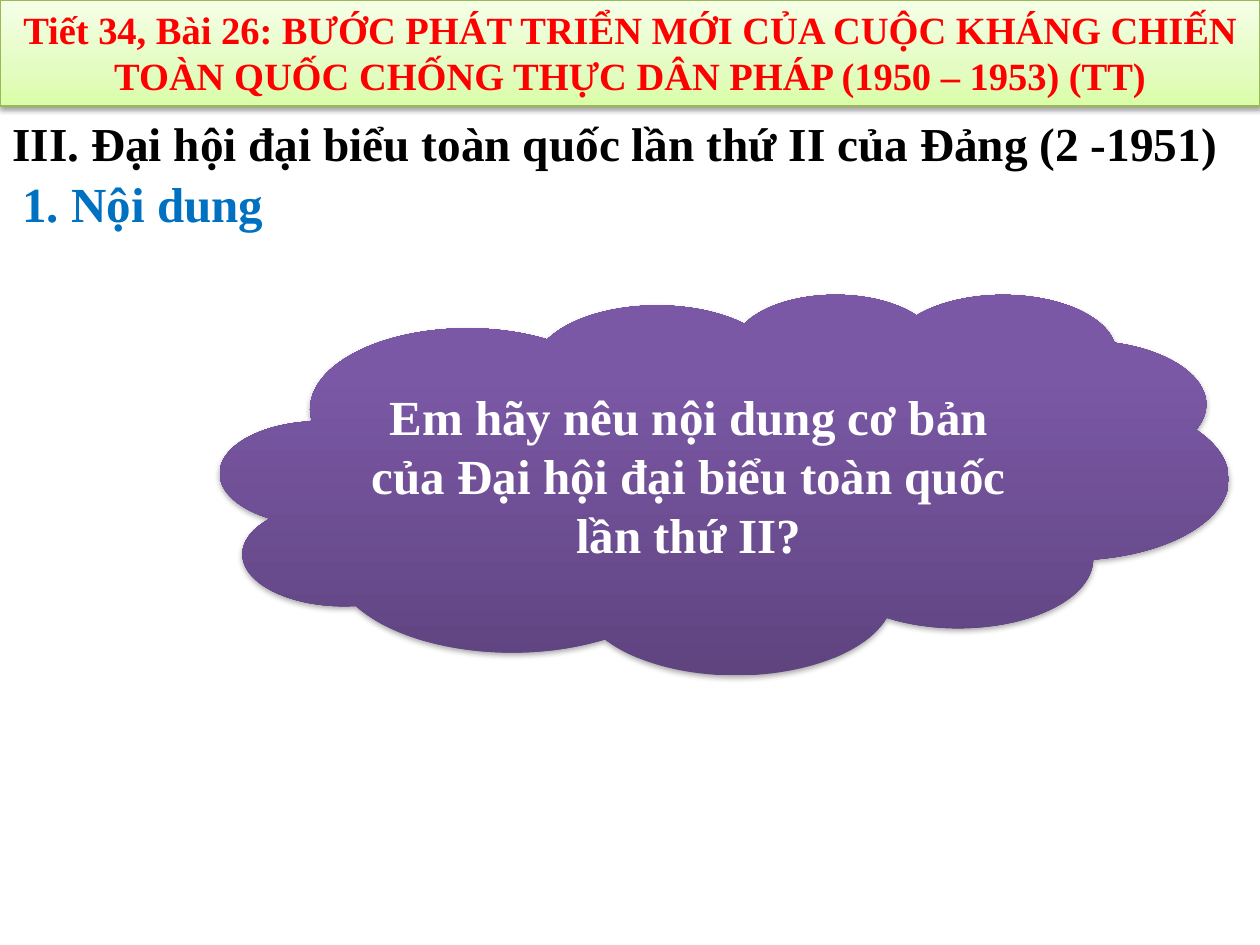
from dataclasses import dataclass

from pptx import Presentation
from pptx.dml.color import RGBColor
from pptx.enum.shapes import MSO_SHAPE
from pptx.enum.text import MSO_ANCHOR, MSO_AUTO_SIZE, PP_ALIGN
from pptx.oxml import parse_xml
from pptx.oxml.ns import nsdecls, qn
from pptx.util import Inches, Pt


@dataclass(frozen=True)
class Theme:
    font: str = "Times New Roman"
    title_color: str = "FF0000"
    heading_color: str = "000000"
    subheading_color: str = "0070C0"
    question_color: str = "FFFFFF"
    shadow_color: str = "000000"
    banner_line: str = "98B955"
    banner_stops: tuple = ((0, "DAFDA7"), (35, "E4FCC2"), (100, "F5FFE7"))
    cloud_stops: tuple = ((0, "5F4480"), (80, "7B58A6"), (100, "7C57A8"))
    title_size: float = 22
    heading_size: float = 27
    body_size: float = 28


@dataclass(frozen=True)
class Label:
    text: str
    size: float
    color: str
    align: PP_ALIGN = PP_ALIGN.LEFT
    anchor: MSO_ANCHOR = MSO_ANCHOR.TOP
    auto_size: MSO_AUTO_SIZE = MSO_AUTO_SIZE.SHAPE_TO_FIT_TEXT


@dataclass(frozen=True)
class Frame:
    left: float
    top: float
    width: float
    height: float

    def lengths(self) -> list:
        return [Inches(v) for v in (self.left, self.top, self.width, self.height)]


THEME = Theme()


def set_all(target, values: dict) -> None:
    for name, value in values.items():
        setattr(target, name, value)


def write_label(shape, label: Label) -> None:
    frame = shape.text_frame
    set_all(frame, {"word_wrap": True, "vertical_anchor": label.anchor,
                    "auto_size": label.auto_size})
    para = frame.paragraphs[0]
    para.alignment = label.align
    span = para.add_run()
    span.text = label.text
    set_all(span.font, {"name": THEME.font, "size": Pt(label.size), "bold": True})
    span.font.color.rgb = RGBColor.from_string(label.color)


def fill_upward(shape, stops: tuple) -> None:
    """Fill with a gradient whose first stop lies at the bottom."""
    shape.fill.gradient()
    shape.fill.gradient_angle = 90
    stop_list = shape._element.spPr.find(qn("a:gradFill")).find(qn("a:gsLst"))
    stop_list.clear()
    for position, color in stops:
        stop_list.append(parse_xml(
            f'<a:gs {nsdecls("a")} pos="{position * 1000}">'
            f'<a:srgbClr val="{color}"/></a:gs>'))


def drop_shadow(shape, opacity: int, distance: float) -> None:
    shape.shadow.inherit = False
    effects = shape._element.spPr.find(qn("a:effectLst"))
    effects.append(parse_xml(
        f'<a:outerShdw {nsdecls("a")} blurRad="{Pt(3.1)}" dist="{Pt(distance)}" '
        f'dir="5400000" rotWithShape="0"><a:srgbClr val="{THEME.shadow_color}">'
        f'<a:alpha val="{opacity * 1000}"/></a:srgbClr></a:outerShdw>'))


def add_banner(page, frame: Frame, label: Label) -> None:
    banner = page.shapes.title
    set_all(banner, dict(zip(("left", "top", "width", "height"), frame.lengths())))
    fill_upward(banner, THEME.banner_stops)
    banner.line.color.rgb = RGBColor.from_string(THEME.banner_line)
    banner.line.width = Pt(0.75)
    drop_shadow(banner, 38, 1.6)
    write_label(banner, label)


def add_heading(page, frame: Frame, label: Label) -> None:
    write_label(page.shapes.add_textbox(*frame.lengths()), label)


def add_cloud(page, frame: Frame, label: Label) -> None:
    cloud = page.shapes.add_shape(MSO_SHAPE.CLOUD, *frame.lengths())
    fill_upward(cloud, THEME.cloud_stops)
    cloud.line.fill.background()
    drop_shadow(cloud, 35, 1.8)
    write_label(cloud, label)


def main() -> None:
    deck = Presentation()
    set_all(deck, {"slide_width": Inches(10), "slide_height": Inches(7.5)})
    page = deck.slides.add_slide(deck.slide_layouts[5])

    add_banner(page, Frame(0, 0, 10, 0.84), Label(
        "Tiết 34, Bài 26: BƯỚC PHÁT TRIỂN MỚI CỦA CUỘC KHÁNG CHIẾN "
        "TOÀN QUỐC CHỐNG THỰC DÂN PHÁP (1950 – 1953) (TT)",
        THEME.title_size, THEME.title_color, PP_ALIGN.CENTER))
    add_heading(page, Frame(0, 0.86, 10, 0.56), Label(
        "III. Đại hội đại biểu toàn quốc lần thứ II của Đảng (2 -1951)",
        THEME.heading_size, THEME.heading_color))
    add_heading(page, Frame(0.08, 1.33, 2.42, 0.57), Label(
        "1. Nội dung", THEME.body_size, THEME.subheading_color))
    add_cloud(page, Frame(1.75, 2.33, 8, 3.02), Label(
        "Em hãy nêu nội dung cơ bản của Đại hội đại biểu toàn quốc lần thứ II?",
        THEME.body_size, THEME.question_color, PP_ALIGN.CENTER,
        MSO_ANCHOR.MIDDLE, MSO_AUTO_SIZE.NONE))

    deck.save("out.pptx")


if __name__ == "__main__":
    main()
